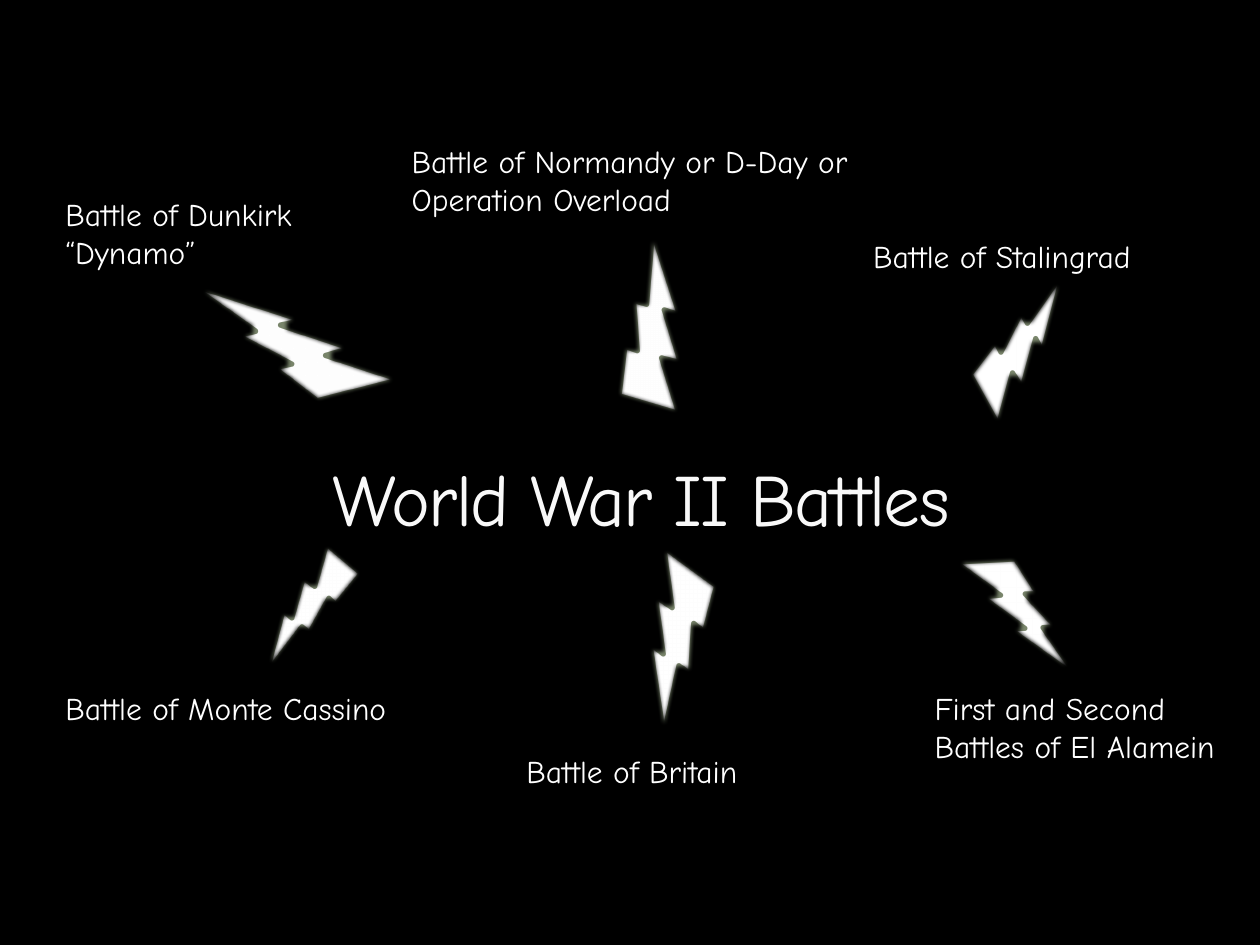
"""Build the World War II battles slide: a central title with bolts towards six battles."""
from lxml import etree
from pptx import Presentation
from pptx import util as u
from pptx.dml.color import RGBColor
from pptx.enum import shapes, text
from pptx.oxml.ns import qn

FONT = "Comic Neue"
COLORS = {"background": "000000", "title": "F9F9F9", "label": "FFFFFF",
          "bolt": "FFFFFF", "edge": "7A866C"}
SOFT_EDGE = u.Pt(2.5)

TITLE = ("World War II Battles", (4.88, 8.69, 16.08, 2.34))
BATTLES = [
    ("Battle of Dunkirk “Dynamo”", (1.07, 3.81, 7.82, 1.8)),
    ("Battle of Normandy or D-Day or Operation Overload", (8.05, 2.74, 11, 1.8)),
    ("Battle of Stalingrad", (17.35, 4.65, 7.32, 1.02)),
    ("Battle of Monte Cassino", (1.07, 13.77, 8.59, 1.02)),
    ("Battle of Britain", (10.36, 15.04, 6.22, 1.02)),
    ("First and Second Battles of El Alamein", (18.59, 13.77, 6.81, 2.57)),
]
BOLTS = [
    ((3.81, 5.72, 4.24, 2.34), 180),
    ((19.05, 11.33, 2.97, 2.01), 14.2),
    ((11.99, 11.53, 3.15, 2.54), 56.5),
    ((5.16, 10.95, 2.03, 2.49), 69.6),
    ((11.81, 5.23, 2.84, 2.9), 222),
    ((19.18, 5.97, 2.82, 2.18), 260.5),
]


def color(name):
    return RGBColor.from_string(COLORS[name])


def lengths(box):
    return [u.Cm(value) for value in box]


def add_text(slide, wording, box, size, color_name):
    shape = slide.shapes.add_textbox(*lengths(box))
    frame = shape.text_frame
    frame.word_wrap = True
    frame.text = wording
    font = frame.paragraphs[0].runs[0].font
    font.name, font.size = FONT, u.Pt(size)
    font.color.rgb = color(color_name)
    return frame


def add_title(slide):
    frame = add_text(slide, *TITLE, 42, "title")
    frame.vertical_anchor = text.MSO_ANCHOR.BOTTOM
    paragraph = frame.paragraphs[0]
    paragraph.alignment = text.PP_ALIGN.CENTER
    paragraph.runs[0].font._element.set("spc", "-100")


def add_bolt(slide, box, rotation):
    shape = slide.shapes.add_shape(shapes.MSO_SHAPE.LIGHTNING_BOLT, *lengths(box))
    shape.rotation = rotation
    shape.fill.solid()
    shape.fill.fore_color.rgb = color("bolt")
    shape.line.color.rgb = color("edge")
    shape.line.width = u.Pt(3)
    shape.shadow.inherit = False
    effects = shape._element.spPr.find(qn("a:effectLst"))
    etree.SubElement(effects, qn("a:softEdge"), rad=str(int(SOFT_EDGE)))


def main():
    presentation = Presentation()
    presentation.slide_width, presentation.slide_height = u.Cm(25.4), u.Cm(19.05)
    slide = presentation.slides.add_slide(presentation.slide_layouts[6])
    slide.background.fill.solid()
    slide.background.fill.fore_color.rgb = color("background")
    add_title(slide)
    for box, rotation in BOLTS:
        add_bolt(slide, box, rotation)
    for wording, box in BATTLES:
        add_text(slide, wording, box, 18, "label")
    presentation.save("out.pptx")


if __name__ == "__main__":
    main()
